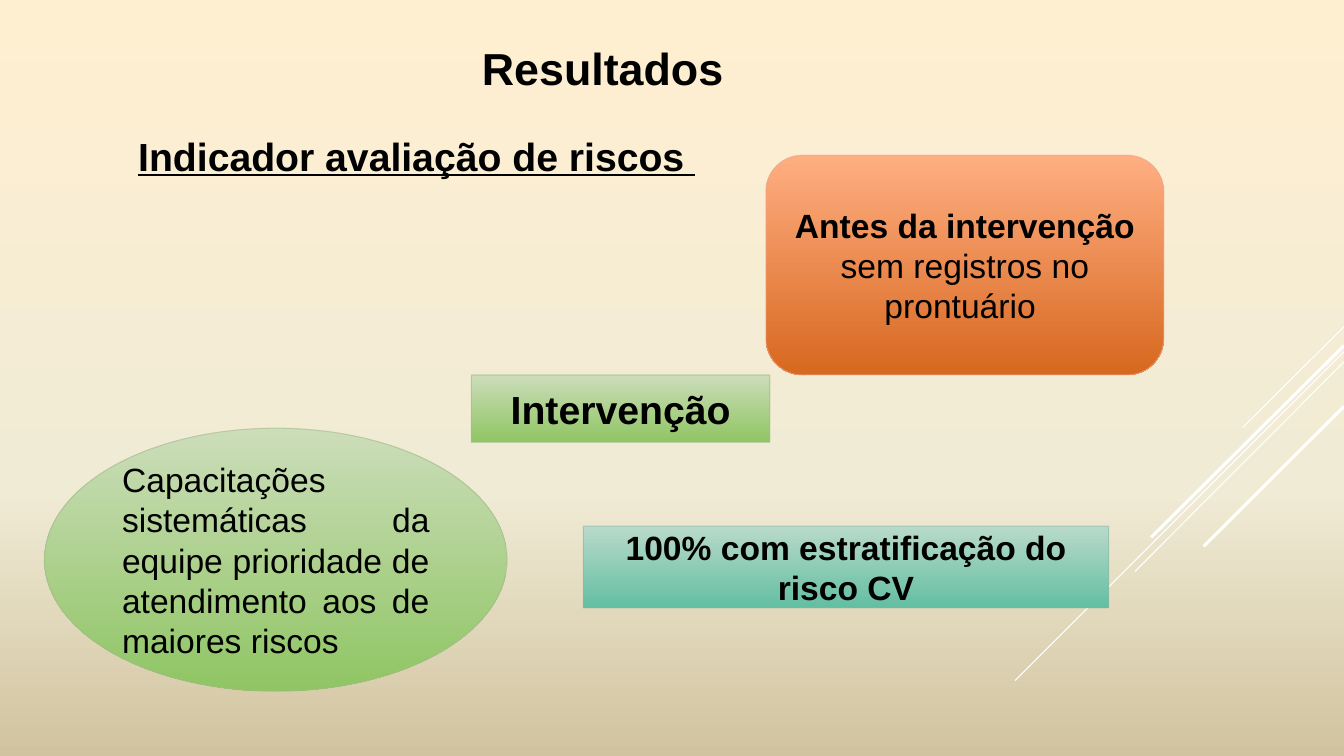
from copy import deepcopy

from lxml.etree import SubElement
from pptx import Presentation
from pptx.dml.color import RGBColor
from pptx.enum.shapes import MSO_CONNECTOR, MSO_SHAPE
from pptx.enum.text import MSO_ANCHOR, MSO_AUTO_SIZE, PP_ALIGN
from pptx.oxml.ns import qn
from pptx.util import Cm, Pt

BLACK = RGBColor(0x00, 0x00, 0x00)
WHITE = RGBColor(0xFF, 0xFF, 0xFF)
CREAM = RGBColor(0xFF, 0xEF, 0xD1)
IVORY = RGBColor(0xF0, 0xEB, 0xD5)
SAND = RGBColor(0xD1, 0xC3, 0x9F)
# Top, bottom and outline of each box
ORANGE = (RGBColor(0xFF, 0xAE, 0x82), RGBColor(0xD7, 0x68, 0x1F),
          RGBColor(0xEE, 0xA7, 0x8F))
GREEN = (RGBColor(0xCC, 0xDD, 0xBA), RGBColor(0x8F, 0xC5, 0x63),
         RGBColor(0xA4, 0xBB, 0x8B))
TEAL = (RGBColor(0xB9, 0xDA, 0xCA), RGBColor(0x63, 0xBE, 0xA2),
        RGBColor(0x8A, 0xB7, 0xA1))


def set_gradient(fill, colors, positions=(0, 1)):
    for stop, color, position in zip(fill.gradient_stops, colors, positions):
        stop.color.rgb = color
        stop.position = position
    fill.gradient_angle = 270


def set_background(s):
    fill = s.background.fill
    fill.gradient()
    stops = s.element.find(".//" + qn("a:gsLst"))
    stops.append(deepcopy(stops[-1]))
    set_gradient(fill, (CREAM, IVORY, SAND), (0, 0.65, 1))


def add_run(p, text, size, bold=False, underline=None):
    r = p.add_run()
    r.text = text
    r.font.name = "Arial"
    r.font.size = Pt(size)
    r.font.bold = bold
    r.font.underline = underline
    r.font.color.rgb = BLACK


def fill_placeholder(sp, box, text, size, underline=None):
    sp.left, sp.top, sp.width, sp.height = (Cm(v) for v in box)
    tf = sp.text_frame
    tf.word_wrap = False
    tf.auto_size = MSO_AUTO_SIZE.NONE
    tf.vertical_anchor = MSO_ANCHOR.TOP
    p = tf.paragraphs[0]
    p.alignment = PP_ALIGN.LEFT
    p.space_before = Pt(0)
    pPr = p._p.get_or_add_pPr()
    pPr.set("marL", "0")
    pPr.set("indent", "0")
    SubElement(pPr, qn("a:buNone"))
    add_run(p, text, size, True, underline)


def add_ray(s, y1, x2, y2, width):
    """Draw a decorative line from the right edge of the slide."""
    line = s.shapes.add_connector(MSO_CONNECTOR.STRAIGHT, Cm(33.87), Cm(y1),
                                  Cm(x2), Cm(y2))
    line.line.color.rgb = WHITE
    line.line.width = Pt(width)
    SubElement(line._element.spPr, qn("a:effectLst"))


def add_box(s, kind, box, colors, runs, size, align=PP_ALIGN.CENTER):
    sp = s.shapes.add_shape(kind, *(Cm(v) for v in box))
    sp.shadow.inherit = False
    top, bottom, outline = colors
    sp.fill.gradient()
    set_gradient(sp.fill, (top, bottom))
    sp.line.color.rgb = outline
    sp.line.width = Pt(0.75)
    color = sp.line._ln.find(".//" + qn("a:srgbClr"))
    SubElement(color, qn("a:alpha"), val="60000")
    tf = sp.text_frame
    tf.word_wrap = True
    tf.vertical_anchor = MSO_ANCHOR.MIDDLE
    p = tf.paragraphs[0]
    p.alignment = align
    for text, bold in runs:
        add_run(p, text, size, bold)


def main():
    prs = Presentation()
    prs.slide_width, prs.slide_height = Cm(33.87), Cm(19.05)
    s = prs.slides.add_slide(prs.slide_layouts[1])
    set_background(s)

    # Decorative rays
    for ray in ((8.23, 31.32, 10.77, 0.75), (8.86, 25.58, 17.15, 0.75),
                (9.12, 28.6, 14.4, 0.75), (8.71, 29.01, 13.54, 2.25),
                (10.24, 30.33, 13.77, 2.25)):
        add_ray(s, *ray)

    # Headings
    fill_placeholder(s.shapes.title, (11.89, 0.91, 6.65, 1.63),
                     "Resultados", 32)
    fill_placeholder(s.placeholders[1], (3.23, 3.2, 14.73, 1.45),
                     "Indicador avaliação de riscos ", 28, True)

    # Before, during and after the intervention
    add_box(s, MSO_SHAPE.ROUNDED_RECTANGLE, (19.3, 3.91, 10.03, 5.54), ORANGE,
            [("Antes da intervenção ", True),
             ("sem registros no prontuário ", False)], 24)
    add_box(s, MSO_SHAPE.RECTANGLE, (11.88, 9.45, 7.52, 1.7), GREEN,
            [("Intervenção", True)], 28)
    add_box(s, MSO_SHAPE.OVAL, (1.12, 10.79, 11.66, 6.63), GREEN,
            [("Capacitações sistemáticas da equipe prioridade de "
              "atendimento aos de maiores riscos", False)],
            24, PP_ALIGN.JUSTIFY)
    add_box(s, MSO_SHAPE.RECTANGLE, (14.7, 13.26, 13.24, 2.06), TEAL,
            [("100% com estratificação do risco CV", True)], 24)

    prs.save("out.pptx")


if __name__ == "__main__":
    main()
